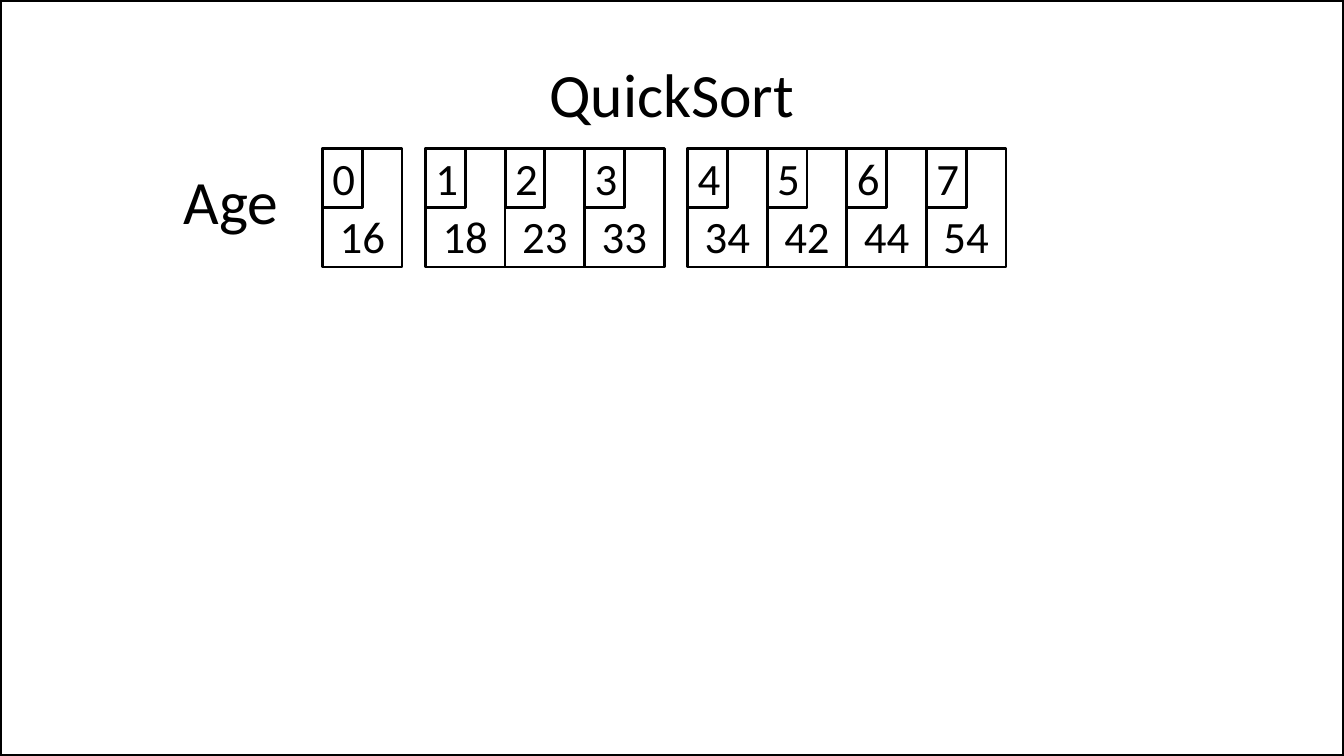
import pptx
import pptx.dml.color
import pptx.enum.shapes
import pptx.enum.text
import pptx.util

Pt = pptx.util.Pt
ANCHOR = pptx.enum.text.MSO_ANCHOR
SLIDE_WIDTH, SLIDE_HEIGHT = 960, 540
CELL_WIDTH, CELL_HEIGHT = 56.85, 85
ARRAY_LEFT, ARRAY_TOP = 230.4, 105.8
GROUP_GAP = 16.7
AGE_GROUPS = [[16], [18, 23, 33], [34, 42, 44, 54]]


def color(value):
    return pptx.dml.color.RGBColor.from_string(value)


class Sketch:
    font_name = "Calibri"
    ink = "000000"
    heading_size = 44
    number_size = 32

    def __init__(self, page):
        self.page = page

    def label(self, shape, text, size, anchor, wrap=True):
        frame = shape.text_frame
        frame.word_wrap = wrap
        frame.vertical_anchor = anchor
        para = frame.paragraphs[0]
        para.text = text
        para.alignment = pptx.enum.text.PP_ALIGN.CENTER
        para.font.name = self.font_name
        para.font.size = Pt(size)
        para.font.color.rgb = color(self.ink)

    def outline(self, left, top, width, height, weight):
        box = self.page.shapes.add_shape(
            pptx.enum.shapes.MSO_SHAPE.RECTANGLE,
            Pt(left), Pt(top), Pt(width), Pt(height))
        box.shadow.inherit = False
        box.fill.background()
        box.line.color.rgb = color(self.ink)
        box.line.width = Pt(weight)
        return box

    def heading(self, text, left, top, width, height, anchor, wrap=True):
        box = self.page.shapes.add_textbox(
            Pt(left), Pt(top), Pt(width), Pt(height))
        self.label(box, text, self.heading_size, anchor, wrap)

    def cell(self, index, value, left, top):
        value_box = self.outline(left, top, CELL_WIDTH, CELL_HEIGHT, 2)
        self.label(value_box, str(value), self.number_size, ANCHOR.BOTTOM)
        index_box = self.outline(left, top, CELL_WIDTH / 2, CELL_HEIGHT / 2, 2)
        self.label(index_box, str(index), self.number_size, ANCHOR.MIDDLE)

    def array(self, groups, left, top):
        index = 0
        for group in groups:
            for value in group:
                self.cell(index, value, left, top)
                left += CELL_WIDTH
                index += 1
            left += GROUP_GAP


def main():
    deck = pptx.Presentation()
    deck.slide_width = Pt(SLIDE_WIDTH)
    deck.slide_height = Pt(SLIDE_HEIGHT)
    page = deck.slides.add_slide(deck.slide_layouts[6])
    sketch = Sketch(page)
    sketch.outline(0, 0, SLIDE_WIDTH, SLIDE_HEIGHT, 3)
    sketch.heading("QuickSort", 48, 21.6, 864, 90, ANCHOR.MIDDLE)
    sketch.heading("Age", 123.1, 113, 84.2, 60.5, ANCHOR.TOP, wrap=False)
    sketch.array(AGE_GROUPS, ARRAY_LEFT, ARRAY_TOP)
    deck.save("out.pptx")


if __name__ == "__main__":
    main()
